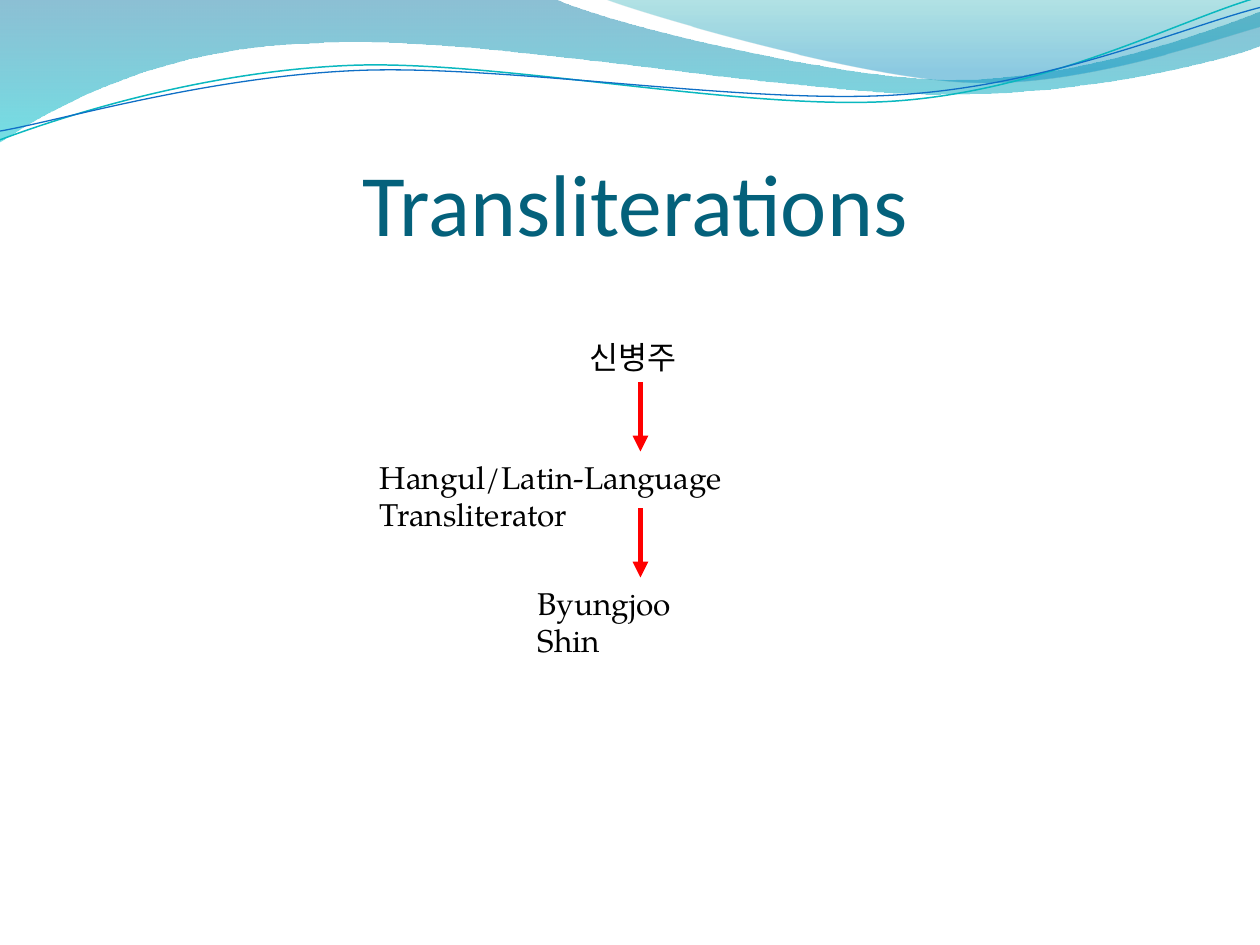
"""Build the Transliterations slide with its wave header and arrow chain."""
from math import cos, radians, sin

from lxml import etree
from pptx import Presentation
from pptx.dml.color import RGBColor
from pptx.enum.shapes import MSO_CONNECTOR
from pptx.enum.text import MSO_ANCHOR, PP_ALIGN
from pptx.oxml.ns import qn
from pptx.util import Pt

STRAIGHT = MSO_CONNECTOR.STRAIGHT
BOTTOM, TOP = MSO_ANCHOR.BOTTOM, MSO_ANCHOR.TOP
CENTER, LEFT = PP_ALIGN.CENTER, PP_ALIGN.LEFT
TILT = 2.7


def color(hex_string):
    return RGBColor.from_string(hex_string)


def add_wave(slide, start, segments, closed):
    """Draw a path of straight (one point) and Bezier (three point) segments."""
    points = [(Pt(x), Pt(y)) for x, y in [start, *sum(segments, [])]]
    builder = slide.shapes.build_freeform(*points[0], scale=1.0)
    builder.add_line_segments(points[1:], close=closed)
    shape = builder.convert_to_shape()
    shape.shadow.inherit = False
    corners = iter(list(shape._element.spPr.iter(qn("a:lnTo"))))
    for segment in segments:
        first, *others = [next(corners) for _ in segment]
        if others:
            first.tag = qn("a:cubicBezTo")
        for corner in others:
            first.append(corner[0])
            corner.getparent().remove(corner)
    return shape


presentation = Presentation()
presentation.slide_width, presentation.slide_height = Pt(720), Pt(540)
slide = presentation.slides.add_slide(presentation.slide_layouts[6])

bands = [
    ((0, 0), [
        [(316.8, -0.7)],
        [(342.7, 12.2), (478.1, 45.4), (545.8, 45.4)],
        [(614.2, 45.4), (689.8, 18.7), (720, 6.5)],
        [(720.7, 25.9)],
        [(707.8, 31.7), (626.4, 54.7), (537.1, 54)],
        [(447.8, 54), (275, 20.2), (185, 24.5)],
        [(92.9, 25.9), (33.1, 59.8), (-0.7, 81.4)],
    ], [(0, "0074A1", 45), (1, "00C6CF", 55)]),
    ((344.9, -0.7), [
        [(366.5, 7.9), (491, 44.6), (553.7, 46.8)],
        [(616.3, 49.7), (691.9, 23), (720, 15.1)],
        [(720, 0)],
    ], [(0, "00A1A9", 30), (0.8, "008BBF", 45)]),
]
for start, segments, stops in bands:
    band = add_wave(slide, start, segments, True)
    band.line.fill.background()
    band.fill.gradient()
    band.fill.gradient_angle = 270
    for stop, (position, hex_string, _) in zip(band.fill.gradient_stops, stops):
        stop.position = position
        stop.color.rgb = color(hex_string)
    stop_colors = band._element.spPr.iter(qn("a:srgbClr"))
    for stop_color, (_, _, opacity) in zip(stop_colors, stops):
        etree.SubElement(stop_color, qn("a:alpha"), val=str(opacity * 1000))

wave_lines = [
    ((359.3, 41.4), (0, 79.9), [
        [(34.6, 67), (113.8, 41), (199.4, 37.4)],
        [(284.4, 33.8), (427, 64.1), (513.4, 57.6)],
        [(599.8, 51.1), (675.4, 10.8), (718.6, -1.4)],
    ], "0AB8BF", 0.85),
    ((359.6, 42.5), (0, 74.9), [
        [(33.8, 69.1), (118.1, 43.9), (203.8, 40.3)],
        [(290.2, 36.7), (429.8, 60.5), (516.2, 54)],
        [(601.9, 48.2), (677.5, 15.1), (720, 4.3)],
    ], "0F6FC6", 0.75),
]
cosine, sine = cos(radians(TILT)), sin(radians(TILT))
for (middle_x, middle_y), start, segments, hex_string, width in wave_lines:
    start, *level = [
        (middle_x + (x - middle_x) * cosine - (y - middle_y) * sine,
         middle_y + (x - middle_x) * sine + (y - middle_y) * cosine)
        for x, y in [start, *sum(segments, [])]
    ]
    level_segments = [level[index:index + 3] for index in range(0, len(level), 3)]
    wave_line = add_wave(slide, start, level_segments, False)
    wave_line.rotation = -TILT
    wave_line.fill.background()
    wave_line.line.color.rgb = color(hex_string)
    wave_line.line.width = Pt(width)

title_style = ("Calibri", 50, "04617B", CENTER, BOTTOM, (0, 3.6, 0, 0))
step_style = ("TeX Gyre Pagella", 18, "000000", LEFT, TOP, (7.2, 3.6, 7.2, 3.6))
texts = [
    ("Transliterations", (36, 55.4, 653.8, 90), title_style),
    ("Hangul/Latin-Language Transliterator", (210, 258, 313.9, 28.8), step_style),
    ("신병주", (329.8, 189.4, 69.1, 28.8), step_style),
    ("Byungjoo Shin", (300.2, 330, 128.9, 28.8), step_style),
]
for text, box, (font_name, size, hex_string, alignment, anchor, insets) in texts:
    text_box = slide.shapes.add_textbox(*map(Pt, box))
    frame = text_box.text_frame
    frame.word_wrap = True
    frame.vertical_anchor = anchor
    frame.margin_left, frame.margin_top, frame.margin_right, frame.margin_bottom = map(Pt, insets)
    paragraph = frame.paragraphs[0]
    paragraph.text = text
    paragraph.alignment = alignment
    paragraph.font.name = font_name
    paragraph.font.size = Pt(size)
    paragraph.font.color.rgb = color(hex_string)

for top, bottom in [(218.4, 258), (290.4, 330)]:
    arrow = slide.shapes.add_connector(STRAIGHT, Pt(366), Pt(top), Pt(366), Pt(bottom))
    arrow.line.color.rgb = color("FF0000")
    arrow.line.width = Pt(3)
    etree.SubElement(arrow.line._get_or_add_ln(), qn("a:tailEnd"), type="triangle")
    etree.SubElement(arrow._element.spPr, qn("a:effectLst"))

presentation.save("out.pptx")
